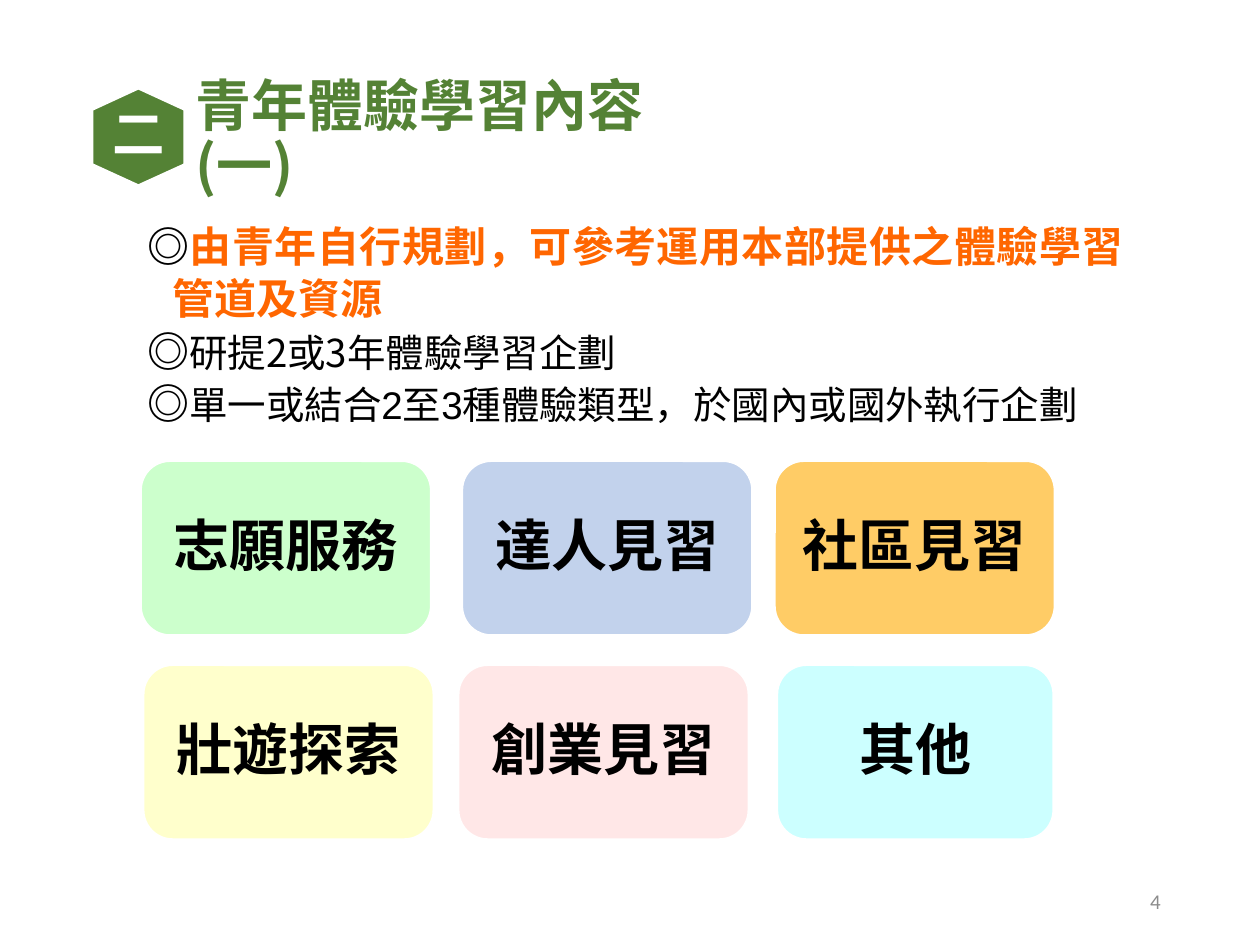
import dataclasses
import typing
import lxml.etree
import pptx
import pptx.dml.color
import pptx.enum.shapes
import pptx.enum.text
import pptx.oxml.ns
import pptx.util

Pt = pptx.util.Pt
Align = pptx.enum.text.PP_ALIGN
Middle = pptx.enum.text.MSO_ANCHOR.MIDDLE


@dataclasses.dataclass(frozen=True)
class Theme:
    green: str = "548235"
    orange: str = "FF6600"
    black: str = "000000"
    white: str = "FFFFFF"
    grey: str = "8C8C8C"
    cjk: str = "Noto Sans CJK SC"
    latin: str = "Arial"
    small: str = "Calibri"
    head: float = 32
    badge: float = 30
    lead: float = 24
    body: float = 22
    foot: float = 12


theme = Theme()


class Style(typing.NamedTuple):
    size: float
    color: str
    bold: bool = False
    face: str = theme.cjk


class Span(typing.NamedTuple):
    text: str
    style: Style


class Card(typing.NamedTuple):
    text: str
    fill: str
    left: float
    width: float


mark = Style(theme.lead, theme.black, True)
plain = Style(theme.body, theme.black)
strong = Style(theme.lead, theme.orange, True)

points = [
    [Span("◎", mark),
     Span("由", strong._replace(face=theme.latin)),
     Span("青年自行規劃，可參考運用本部提供之體驗學習管道及資源", strong)],
    [Span("◎", mark), Span("研提2或3年體驗學習企劃", plain)],
    [Span("◎", mark), Span("單一", plain),
     Span("或結合2至3種體驗類型，於國內或國外執行企劃",
          plain._replace(face=theme.latin))],
]

rows = [
    [Card("志願服務", "CCFFCC", 80.6, 165.6),
     Card("達人見習", "C2D2EC", 264.2, 165.6),
     Card("社區見習", "FFCC66", 442.8, 159.8)],
    [Card("壯遊探索", "FFFFCC", 82.1, 165.6),
     Card("創業見習", "FFE7E7", 262.1, 165.6),
     Card("其他", "CCFFFF", 444.2, 157.7)],
]


def color(code: str) -> pptx.dml.color.RGBColor:
    return pptx.dml.color.RGBColor.from_string(code)


def set_font(font, props, style: Style) -> None:
    font.size = Pt(style.size)
    font.bold = style.bold
    font.color.rgb = color(style.color)
    font.name = style.face
    east = lxml.etree.SubElement(props, pptx.oxml.ns.qn("a:ea"))
    east.set("typeface", theme.cjk)


def set_frame(shape, side: float, edge: float, anchor=Middle):
    frame = shape.text_frame
    frame.word_wrap = True
    frame.vertical_anchor = anchor
    frame.margin_left = frame.margin_right = Pt(side)
    frame.margin_top = frame.margin_bottom = Pt(edge)
    return frame


def set_text(frame, text: str, style: Style, align, space: float = 0.9) -> None:
    para = frame.paragraphs[0]
    para.text = text
    para.alignment = align
    para.line_spacing = space
    font = para.font
    props = para._p.pPr.find(pptx.oxml.ns.qn("a:defRPr"))
    set_font(font, props, style)


def set_look(shape, fill: str, line: float) -> None:
    shape.shadow.inherit = False
    shape.fill.solid()
    shape.fill.fore_color.rgb = color(fill)
    shape.line.color.rgb = color(theme.white)
    shape.line.width = Pt(line)


def add_box(slide, left: float, top: float, width: float, height: float):
    return slide.shapes.add_textbox(Pt(left), Pt(top), Pt(width), Pt(height))


def add_title(slide) -> None:
    left, mid, right = 52.7, 79.1, 105.6
    build = slide.shapes.build_freeform(Pt(mid), Pt(50.4))
    build.add_line_segments(
        [(Pt(x), Pt(y)) for x, y in
         [(right, 62.6), (right, 94), (mid, 106.1), (left, 94), (left, 62.6)]],
        close=True)
    badge = build.convert_to_shape()
    set_look(badge, theme.green, 1.5)
    set_text(set_frame(badge, 10, 17), "二",
             Style(theme.badge, theme.white, True), Align.CENTER)
    box = add_box(slide, 108, 54, 310.3, 50.4)
    set_text(set_frame(box, 3.6, 3.6), "青年體驗學習內容(一)",
             Style(theme.head, theme.green, True), Align.LEFT)


def add_points(slide) -> None:
    box = add_box(slide, 79.2, 121.7, 568.1, 126.7)
    frame = set_frame(box, 5, 2.9, pptx.enum.text.MSO_ANCHOR.TOP)
    for at, spans in enumerate(points):
        para = frame.add_paragraph() if at else frame.paragraphs[0]
        para.alignment = Align.JUSTIFY
        para.line_spacing = Pt(30)
        props = para._p.get_or_add_pPr()
        props.set("marL", str(Pt(14.4)))
        props.set("indent", str(Pt(-14.4)))
        for span in spans:
            run = para.add_run()
            run.text = span.text
            set_font(run.font, run._r.get_or_add_rPr(), span.style)


def add_card(slide, card: Card, top: float) -> None:
    kind = pptx.enum.shapes.MSO_SHAPE.ROUNDED_RECTANGLE
    shape = slide.shapes.add_shape(
        kind, Pt(card.left), Pt(top), Pt(card.width), Pt(99.4))
    set_look(shape, card.fill, 1)
    set_text(set_frame(shape, 9.4, 9.4), card.text,
             Style(theme.head, theme.black, True), Align.CENTER)


def main() -> None:
    deck = pptx.Presentation()
    deck.slide_width, deck.slide_height = Pt(720), Pt(540)
    slide = deck.slides.add_slide(deck.slide_layouts[6])
    add_points(slide)
    add_title(slide)
    for at, row in enumerate(rows):
        for card in row:
            add_card(slide, card, 263.5 + 116.6 * at)
    foot = add_box(slide, 508.3, 500.4, 162, 28.8)
    set_text(set_frame(foot, 7.2, 3.6), "4",
             Style(theme.foot, theme.grey, face=theme.small), Align.RIGHT, 1.0)
    deck.save("out.pptx")


if __name__ == "__main__":
    main()
